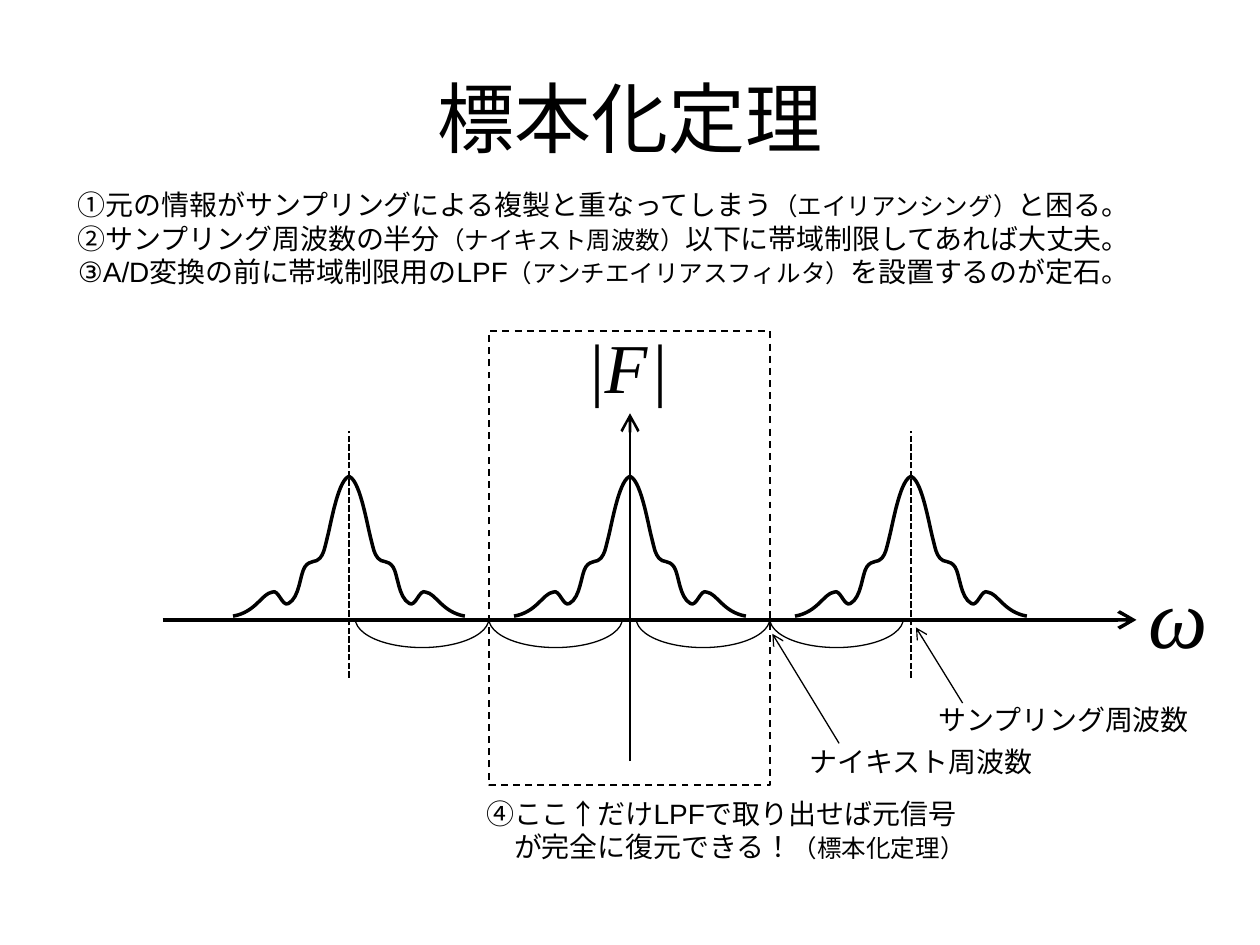
import pptx
import pptx.dml.color
import pptx.enum.dml
import pptx.enum.lang
import pptx.enum.shapes
import pptx.enum.text
import pptx.oxml
import pptx.oxml.ns
import pptx.util

Inches = pptx.util.Inches
Pt = pptx.util.Pt
qn = pptx.oxml.ns.qn
DASH = pptx.enum.dml.MSO_LINE
SHAPE = pptx.enum.shapes.MSO_SHAPE
ALIGN = pptx.enum.text.PP_ALIGN
ANCHOR = pptx.enum.text.MSO_ANCHOR
AUTO_SIZE = pptx.enum.text.MSO_AUTO_SIZE
JAPANESE = pptx.enum.lang.MSO_LANGUAGE_ID.JAPANESE

BLACK = pptx.dml.color.RGBColor(0x00, 0x00, 0x00)
SERIF = "Times New Roman"
A_NS = 'xmlns:a="http://schemas.openxmlformats.org/drawingml/2006/main"'

ORIGIN_X = 5.0
AXIS_Y = 4.92
SAMPLING = 2.23
BAND_LEFT = 3.88
ARC_W, ARC_H = 1.06, 0.46
HALF_SPECTRUM = [
    (-0.01, 3.78),
    (0.08, 3.78), (0.14, 4.14), (0.17, 4.26),
    (0.20, 4.38), (0.20, 4.39), (0.23, 4.43),
    (0.26, 4.47), (0.31, 4.44), (0.35, 4.50),
    (0.39, 4.56), (0.39, 4.74), (0.48, 4.79),
    (0.53, 4.82), (0.56, 4.67), (0.61, 4.70),
    (0.69, 4.71), (0.74, 4.86), (0.92, 4.89),
]


class Diagram:
    """Draws black line art and text on one slide."""

    def __init__(self, slide, font="Arial", size=16):
        self.shapes = slide.shapes
        self.font = font
        self.size = size

    def stroke(self, sp, width, dash=None):
        sp.line.color.rgb = BLACK
        sp.line.width = Pt(width)
        if dash is not None:
            sp.line.dash_style = dash

    def line(self, start, end, width, dash=None, arrow=None):
        cxn = self.shapes.add_connector(
            pptx.enum.shapes.MSO_CONNECTOR.STRAIGHT,
            *(Inches(v) for v in (*start, *end)))
        self.stroke(cxn, width, dash)
        if arrow:
            cxn.line._get_or_add_ln().append(pptx.oxml.parse_xml(
                f'<a:tailEnd {A_NS} type="arrow" w="{arrow}" len="{arrow}"/>'))
        cxn._element.spPr.append(pptx.oxml.parse_xml(f"<a:effectLst {A_NS}/>"))

    def outline(self, kind, box, width, dash=None):
        sp = self.shapes.add_shape(kind, *(Inches(v) for v in box))
        sp.shadow.inherit = False
        sp.fill.background()
        self.stroke(sp, width, dash)
        return sp

    def lower_arc(self, left):
        sp = self.outline(SHAPE.ARC, (left, AXIS_Y - ARC_H / 2 - 0.01, ARC_W, ARC_H), 0.75)
        sp.adjustments[0] = 0
        sp.adjustments[1] = 108

    def curve(self, nodes, width):
        points = [(Inches(x), Inches(y)) for x, y in nodes]
        builder = self.shapes.build_freeform(*points[0])
        builder.add_line_segments(points[1:], close=False)
        sp = builder.convert_to_shape()
        segments = list(sp._element.iter(qn("a:lnTo")))
        for first, second, third in zip(*[iter(segments)] * 3):
            bezier = pptx.oxml.parse_xml(f"<a:cubicBezTo {A_NS}/>")
            first.addprevious(bezier)
            for segment in (first, second, third):
                bezier.append(segment[0])
                segment.getparent().remove(segment)
        sp.shadow.inherit = False
        sp.fill.background()
        self.stroke(sp, width)

    def text(self, box, paragraphs, font=None, wrap=True):
        sp = self.shapes.add_textbox(*(Inches(v) for v in box))
        tf = sp.text_frame
        tf.word_wrap = wrap
        tf.auto_size = AUTO_SIZE.SHAPE_TO_FIT_TEXT
        for i, runs in enumerate(paragraphs):
            p = tf.add_paragraph() if i else tf.paragraphs[0]
            for text, size, italic in runs:
                r = p.add_run()
                r.text = text
                r.font.name = font or self.font
                r.font.size = Pt(size or self.size)
                r.font.italic = italic
                r.font.color.rgb = BLACK
                r.font.language_id = JAPANESE
        return tf

    def remarks(self, box, paragraphs):
        """Write paragraphs whose bracketed asides are smaller."""
        self.text(box, [
            [(text, 14 if text.startswith("（") else None, None) for text in runs]
            for runs in paragraphs])


def main():
    prs = pptx.Presentation()
    prs.slide_width, prs.slide_height = Inches(10), Inches(7.5)
    s = prs.slides.add_slide(prs.slide_layouts[6])
    diagram = Diagram(s)

    tf = diagram.text((0.5, 0.3, 9, 1.25), [[("標本化定理", 44, None)]], font="Karla")
    tf.auto_size = AUTO_SIZE.NONE
    tf.vertical_anchor = ANCHOR.MIDDLE
    tf.paragraphs[0].alignment = ALIGN.CENTER

    diagram.line((1.29, AXIS_Y), (9.02, AXIS_Y), 2, arrow="lg")
    diagram.line((ORIGIN_X, 6.04), (ORIGIN_X, 3.28), 1.5, arrow="lg")
    diagram.text((9.02, 4.43, 0.68, 0.91), [[("ω", 48, True)]], SERIF, wrap=False)

    for side in (-1, 1):
        x = ORIGIN_X + side * SAMPLING
        diagram.line((x, 5.38), (x, 3.42), 1.25, DASH.SQUARE_DOT)
    for nyquist_x in (BAND_LEFT, BAND_LEFT + SAMPLING):
        for left in (nyquist_x - ARC_W, nyquist_x):
            diagram.lower_arc(left)

    for order in (0, -1, 1):
        center = ORIGIN_X + order * SAMPLING
        for side in (1, -1):
            diagram.curve([(center + side * dx, y) for dx, y in HALF_SPECTRUM], 2)

    diagram.outline(SHAPE.RECTANGLE, (BAND_LEFT, 2.63, SAMPLING, 3.6), 1, DASH.DASH)
    diagram.remarks((3.76, 6.27, 4.05, 0.64), [
        ["④ここ↑だけLPFで取り出せば元信号"],
        ["　が完全に復元できる！", "（標本化定理）"]])
    diagram.remarks((7.35, 5.53, 2.29, 0.37), [["サンプリング周波数"]])
    diagram.remarks((6.33, 5.86, 2.29, 0.37), [["ナイキスト周波数"]])
    diagram.line((6.66, 5.9), (6.13, 5.03), 0.75, arrow="med")
    diagram.text((4.59, 2.52, 0.94, 0.77), [
        [("|", 40, None), ("F", 40, True), (" ", 14, True), ("|", 40, False)]], SERIF)
    diagram.line((7.64, 5.58), (7.27, 4.98), 0.75, arrow="med")
    diagram.remarks((0.52, 1.44, 9.11, 0.91), [
        ["①元の情報がサンプリングによる複製と重なってしまう", "（エイリアンシング）", "と困る。"],
        ["②サンプリング周波数の半分", "（ナイキスト周波数）", "以下に帯域制限してあれば大丈夫。"],
        ["③A/D変換の前に帯域制限用のLPF", "（アンチエイリアスフィルタ）", "を設置するのが定石。"]])

    prs.save("out.pptx")


if __name__ == "__main__":
    main()
